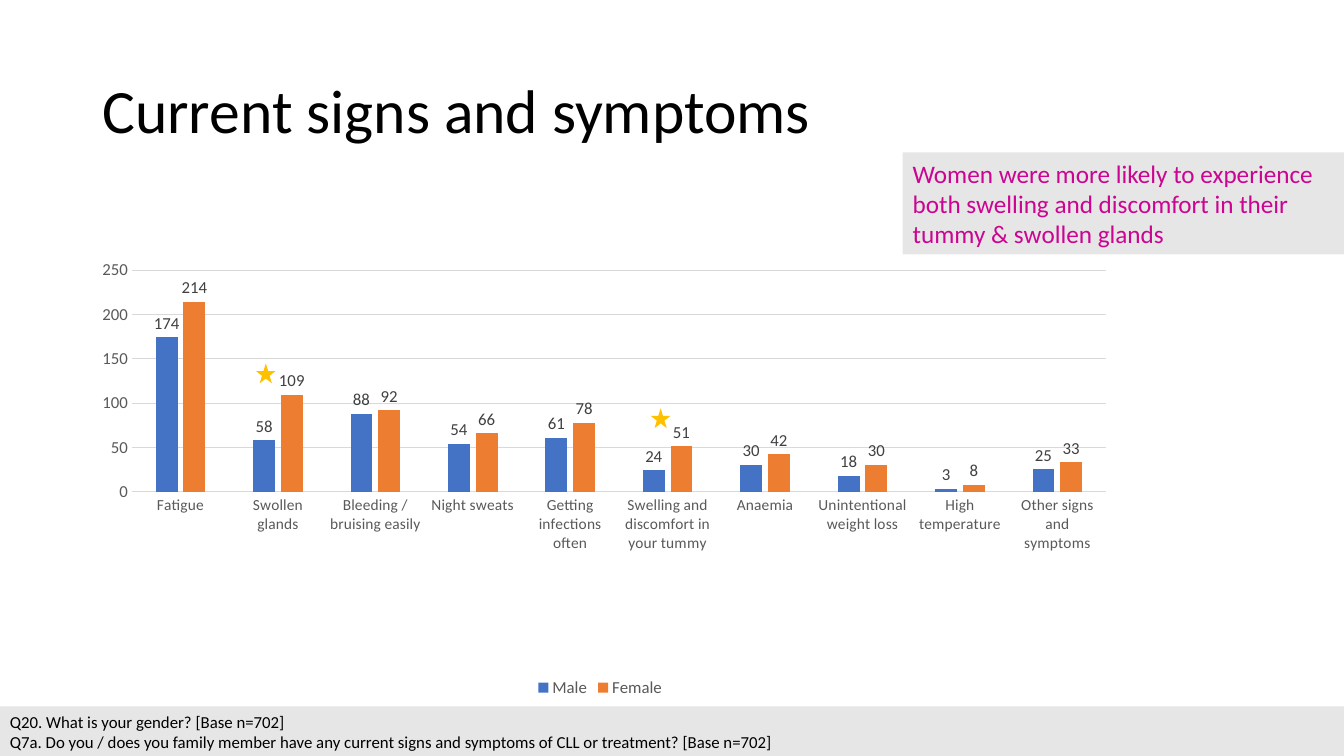
"""Build the slide on current signs and symptoms by gender."""
from dataclasses import dataclass

from lxml import etree
from pptx import Presentation
from pptx.chart.data import CategoryChartData
from pptx.dml.color import RGBColor
from pptx.enum.chart import XL_CHART_TYPE, XL_LABEL_POSITION, XL_LEGEND_POSITION, XL_TICK_MARK
from pptx.enum.shapes import MSO_SHAPE
from pptx.enum.text import MSO_ANCHOR, PP_ALIGN
from pptx.oxml.ns import qn
from pptx.util import Cm, Pt

RECTANGLE = MSO_SHAPE.RECTANGLE
STAR = MSO_SHAPE.STAR_5_POINT
COLUMNS = XL_CHART_TYPE.COLUMN_CLUSTERED
OUTSIDE_END = XL_LABEL_POSITION.OUTSIDE_END
LEGEND_BOTTOM = XL_LEGEND_POSITION.BOTTOM
NO_TICK = XL_TICK_MARK.NONE
MIDDLE = MSO_ANCHOR.MIDDLE
LEFT = PP_ALIGN.LEFT

FONT = "Calibri"
COLORS = {
    "text": "000000",
    "axis": "595959",
    "label": "404040",
    "grid": "D9D9D9",
    "panel": "E7E6E6",
    "highlight": "CB0592",
    "star": "FFC000",
    "male": "4472C4",
    "female": "ED7D31",
}


@dataclass(frozen=True)
class Box:
    """Position and size in centimetres."""

    left: float
    top: float
    width: float
    height: float

    def lengths(self) -> tuple:
        """Return the four values as lengths."""
        return Cm(self.left), Cm(self.top), Cm(self.width), Cm(self.height)


@dataclass(frozen=True)
class Panel:
    """Filled rectangle with text."""

    box: Box
    lines: tuple[str, ...]
    size: int
    color: str


@dataclass(frozen=True)
class Gender:
    """One chart series."""

    name: str
    color: str
    counts: tuple[int, ...]


TITLE_BOX = Box(2.33, 1.03, 29.21, 3.68)
CHART_BOX = Box(1.98, 5.41, 26.29, 12.27)
PLOT_LAYOUT = {"x": 0.051, "y": 0.114, "w": 0.934, "h": 0.455}
PANELS = (
    Panel(
        Box(0, 17.8, 33.87, 1.27),
        (
            "Q20. What is your gender? [Base n=702]",
            "Q7a. Do you / does you family member have any current signs and symptoms "
            "of CLL or treatment? [Base n=702]",
        ),
        12,
        "text",
    ),
    Panel(
        Box(22.75, 3.84, 11.12, 2.57),
        ("Women were more likely to experience both swelling and discomfort in their tummy & swollen glands",),
        18,
        "highlight",
    ),
)
STARS = (Box(6.45, 9.16, 0.5, 0.5), Box(16.4, 10.29, 0.5, 0.5))
SYMPTOMS = (
    "Fatigue",
    "Swollen glands",
    "Bleeding / bruising easily",
    "Night sweats",
    "Getting infections often",
    "Swelling and discomfort in your tummy",
    "Anaemia",
    "Unintentional weight loss",
    "High temperature",
    "Other signs and symptoms",
)
GENDERS = (
    Gender("Male", "male", (174, 58, 88, 54, 61, 24, 30, 18, 3, 25)),
    Gender("Female", "female", (214, 109, 92, 66, 78, 51, 42, 30, 8, 33)),
)


def rgb(name: str) -> RGBColor:
    """Return a named colour."""
    return RGBColor.from_string(COLORS[name])


def format_font(font, size: int, color: str) -> None:
    """Set typeface, size and colour."""
    font.name = FONT
    font.size = Pt(size)
    font.color.rgb = rgb(color)


def write_text(frame, lines: tuple[str, ...], *, size: int, color: str, spacing: float = 1.0) -> None:
    """Fill a text frame, one paragraph for each line."""
    frame.word_wrap = True
    frame.vertical_anchor = MIDDLE
    for index, line in enumerate(lines):
        paragraph = frame.paragraphs[0] if index == 0 else frame.add_paragraph()
        paragraph.alignment = LEFT
        paragraph.line_spacing = spacing
        run = paragraph.add_run()
        run.text = line
        format_font(run.font, size, color)


def add_filled_shape(slide, preset, box: Box, color: str):
    """Add a flat shape without outline."""
    shape = slide.shapes.add_shape(preset, *box.lengths())
    shape.shadow.inherit = False
    shape.fill.solid()
    shape.fill.fore_color.rgb = rgb(color)
    shape.line.fill.background()
    return shape


def add_panel(slide, panel: Panel) -> None:
    """Add a grey panel and its text."""
    shape = add_filled_shape(slide, RECTANGLE, panel.box, "panel")
    write_text(shape.text_frame, panel.lines, size=panel.size, color=panel.color)


def format_grid_line(line) -> None:
    """Set the thin grey line of the chart."""
    line.color.rgb = rgb("grid")
    line.width = Pt(0.75)


def place_plot(chart) -> None:
    """Fix the inner plot area inside the chart."""
    plot_area = next(chart.element.iter(qn("c:plotArea")))
    for layout in plot_area.findall(qn("c:layout")):
        plot_area.remove(layout)
    layout = etree.Element(qn("c:layout"))
    manual = etree.SubElement(layout, qn("c:manualLayout"))
    settings = {"layoutTarget": "inner", "xMode": "edge", "yMode": "edge", **PLOT_LAYOUT}
    for tag, value in settings.items():
        etree.SubElement(manual, qn(f"c:{tag}")).set("val", str(value))
    plot_area.insert(0, layout)


def format_axes(chart) -> None:
    """Format both axes and the grid."""
    for axis, size in ((chart.category_axis, 11), (chart.value_axis, 12)):
        axis.major_tick_mark = NO_TICK
        axis.minor_tick_mark = NO_TICK
        format_font(axis.tick_labels.font, size, "axis")
    format_grid_line(chart.category_axis.format.line)
    value_axis = chart.value_axis
    value_axis.minimum_scale, value_axis.maximum_scale, value_axis.major_unit = 0, 250, 50
    value_axis.format.line.fill.background()
    value_axis.has_major_gridlines = True
    format_grid_line(value_axis.major_gridlines.format.line)


def add_symptom_chart(slide) -> None:
    """Add the clustered columns by symptom and gender."""
    data = CategoryChartData()
    data.categories = SYMPTOMS
    for gender in GENDERS:
        data.add_series(gender.name, gender.counts)
    chart = slide.shapes.add_chart(COLUMNS, *CHART_BOX.lengths(), data).chart
    format_font(chart.font, 10, "text")
    chart.has_title = False
    chart.has_legend = True
    chart.legend.position = LEGEND_BOTTOM
    chart.legend.include_in_layout = False
    format_font(chart.legend.font, 12, "axis")
    format_axes(chart)
    plot = chart.plots[0]
    plot.gap_width, plot.overlap = 219, -27
    plot.vary_by_categories = False
    for series, gender in zip(plot.series, GENDERS):
        series.format.fill.solid()
        series.format.fill.fore_color.rgb = rgb(gender.color)
        labels = series.data_labels
        labels.show_value = True
        labels.position = OUTSIDE_END
        format_font(labels.font, 12, "label")
    place_plot(chart)


def main() -> None:
    """Build and save the presentation."""
    presentation = Presentation()
    presentation.slide_width, presentation.slide_height = Cm(33.87), Cm(19.05)
    slide = presentation.slides.add_slide(presentation.slide_layouts[6])
    title = slide.shapes.add_textbox(*TITLE_BOX.lengths())
    write_text(title.text_frame, ("Current signs and symptoms",), size=44, color="text", spacing=0.9)
    add_symptom_chart(slide)
    for panel in PANELS:
        add_panel(slide, panel)
    for box in STARS:
        add_filled_shape(slide, STAR, box, "star")
    presentation.save("out.pptx")


if __name__ == "__main__":
    main()
